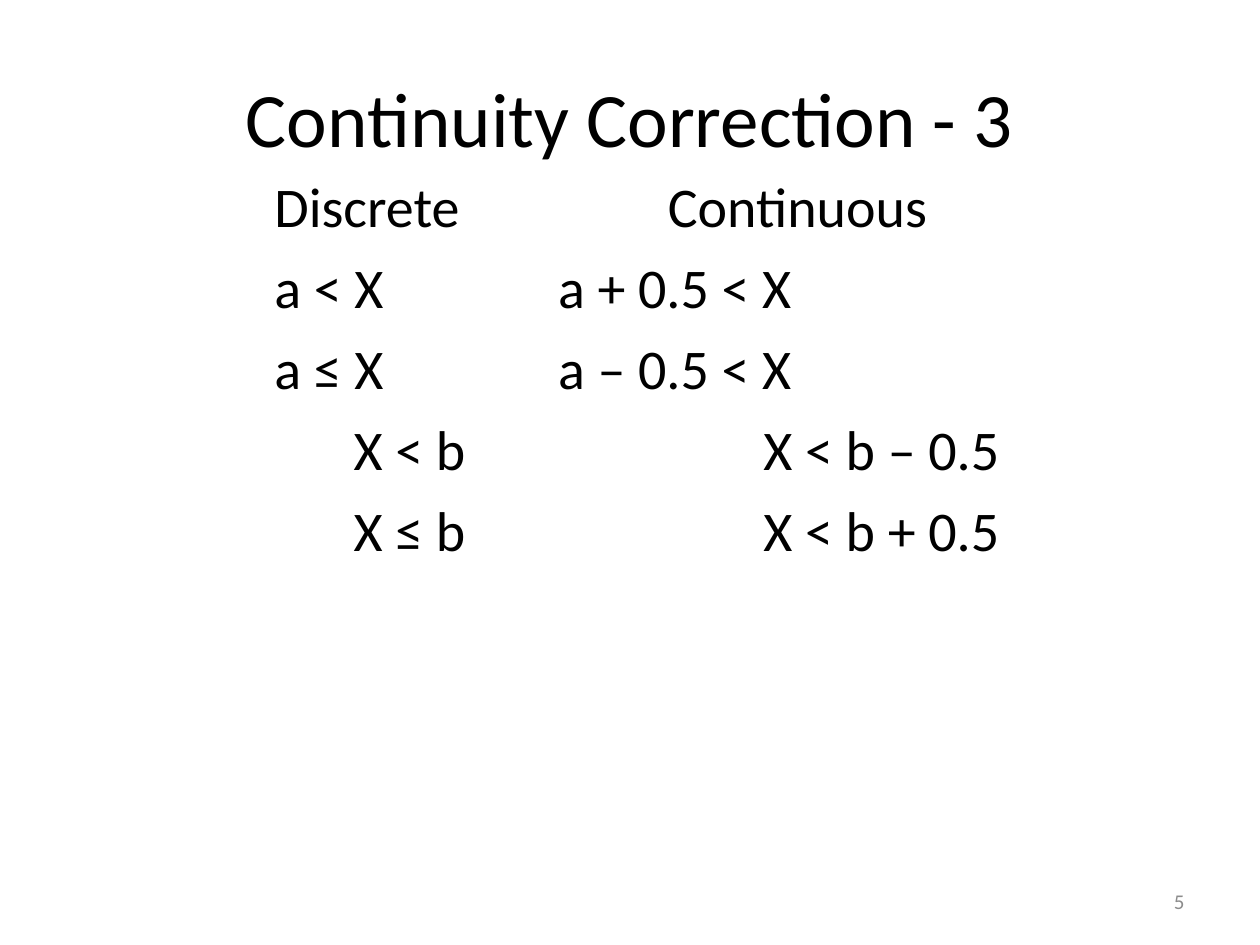
from lxml.etree import SubElement as Sub
from pptx import Presentation as Deck
from pptx.dml.color import RGBColor as Color
from pptx.enum.text import MSO_ANCHOR as Anchor, PP_ALIGN as Align
from pptx.oxml.ns import qn
from pptx.util import Cm, Pt


def paint(code):
    return Color.from_string(code)


class Page:
    font = "Calibri"
    ink = "000000"
    gray = "8C8C8C"
    rule = "FFFFFF"
    pad = 0.25

    def __init__(self, deck):
        self.slide = deck.slides.add_slide(deck.slide_layouts[5])

    def words(self, frame, text, size, align, hue=ink):
        frame.text = text
        for par in frame.paragraphs:
            par.alignment = align
            for run in par.runs:
                run.font.name = self.font
                run.font.size = Pt(size)
                run.font.color.rgb = paint(hue)

    def title(self, text, left, top, width, height):
        shape = self.slide.shapes.title
        shape.left, shape.top = Cm(left), Cm(top)
        shape.width, shape.height = Cm(width), Cm(height)
        shape.text_frame.vertical_anchor = Anchor.MIDDLE
        self.words(shape.text_frame, text, 44, Align.CENTER)

    def label(self, text, left, top, width, height):
        box = self.slide.shapes.add_textbox(Cm(left), Cm(top), Cm(width), Cm(height))
        box.text_frame.word_wrap = True
        box.text_frame.vertical_anchor = Anchor.MIDDLE
        self.words(box.text_frame, text, 12, Align.RIGHT, self.gray)

    def edge(self, cell):
        props = cell._tc.get_or_add_tcPr()
        for n, side in enumerate(("lnL", "lnR", "lnT", "lnB")):
            line = props.makeelement(qn(f"a:{side}"), {"w": str(Pt(1))})
            fill = Sub(line, qn("a:solidFill"))
            Sub(fill, qn("a:srgbClr"), val=self.rule)
            props.insert(n, line)

    def table(self, rows, left, top, widths, step, height):
        shape = self.slide.shapes.add_table(
            len(rows), len(widths), Cm(left), Cm(top), Cm(sum(widths)), Cm(step * len(rows)))
        shape.height = Cm(height)
        grid = shape.table
        grid.first_row = grid.horz_banding = False
        for col, width in zip(grid.columns, widths):
            col.width = Cm(width)
        for r, row in enumerate(rows):
            for c, (text, align, shift) in enumerate(row):
                cell = grid.cell(r, c)
                cell.fill.background()
                cell.margin_left = Cm(self.pad + shift)
                self.words(cell.text_frame, text, 32, align)
                self.edge(cell)


def pair(first, second, near=0, far=0, align=Align.LEFT):
    return (first, Align.LEFT, near), (second, align, far)


def main():
    deck = Deck()
    deck.slide_width, deck.slide_height = Cm(25.4), Cm(19.05)
    page = Page(deck)
    page.title("Continuity Correction - 3", 1.27, 0.76, 22.86, 3.18)
    rows = [
        pair("Discrete", "Continuous", align=Align.CENTER),
        pair("a < X", "a + 0.5 < X"),
        pair("a ≤ X", "a – 0.5 < X"),
        pair("X < b", "X < b – 0.5", 1.6, 4.14),
        pair("X ≤ b", "X < b + 0.5", 1.6, 4.14),
        pair("", ""),
        pair("", ""),
    ]
    page.table(rows, 5.28, 3.38, (5.72, 10.16), 1.03, 11.25)
    page.label("5", 18.2, 17.66, 5.93, 1.01)
    deck.save("out.pptx")


if __name__ == "__main__":
    main()
